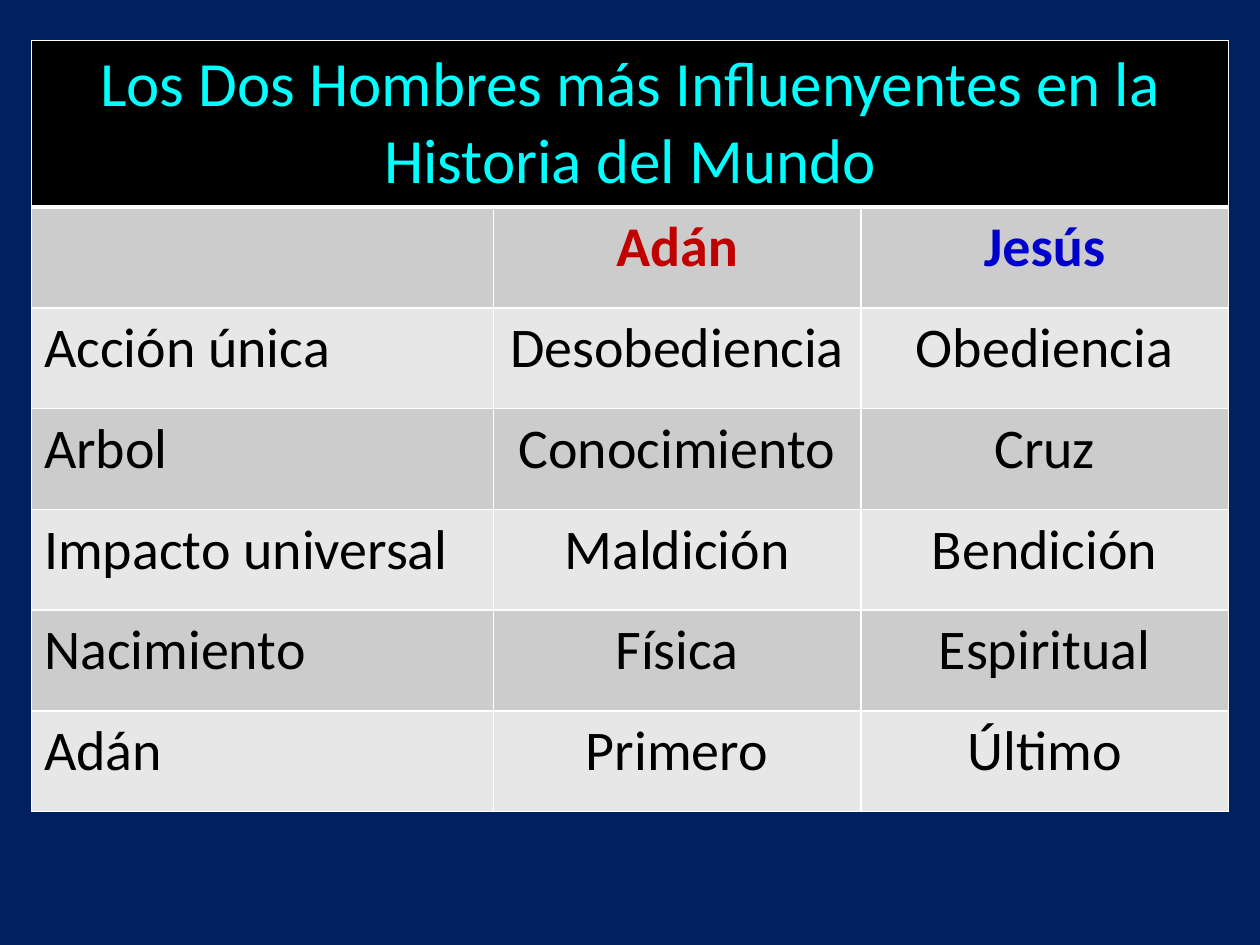
import pptx
import pptx.dml.color
import pptx.enum.text
import pptx.oxml.ns
import pptx.util
from lxml import etree

Inches = pptx.util.Inches
Pt = pptx.util.Pt
RGBColor = pptx.dml.color.RGBColor
ALIGN = pptx.enum.text.PP_ALIGN

NAVY = RGBColor(0x00, 0x20, 0x60)
BLACK = RGBColor(0x00, 0x00, 0x00)
WHITE = RGBColor(0xFF, 0xFF, 0xFF)
CYAN = RGBColor(0x00, 0xFF, 0xFF)
RED = RGBColor(0xC0, 0x00, 0x00)
BLUE = RGBColor(0x00, 0x00, 0xCC)
DARK_BAND = RGBColor(0xCC, 0xCC, 0xCC)
LIGHT_BAND = RGBColor(0xE7, 0xE7, 0xE7)

TITLE = "Los Dos Hombres más Influenyentes en la Historia del Mundo"
COMPARISON = [
    ("", "Adán", "Jesús"),
    ("Acción única", "Desobediencia", "Obediencia"),
    ("Arbol", "Conocimiento", "Cruz"),
    ("Impacto universal", "Maldición", "Bendición"),
    ("Nacimiento", "Física", "Espiritual"),
    ("Adán", "Primero", "Último"),
]
NAME_COLORS = [BLACK, RED, BLUE]
COLUMN_SHARES = [3.67, 2.92, 2.92]
TITLE_HEIGHT = 1.3

TITLE_FORMAT = {"name": "Calibri", "size": Pt(36), "bold": False}
BODY_FORMAT = {"name": "Calibri", "size": Pt(32), "bold": False}
NAME_FORMAT = {**BODY_FORMAT, "bold": True}


def set_borders(cell, widths):
    properties = cell._tc.get_or_add_tcPr()
    for side, width in widths.items():
        line = etree.SubElement(
            properties, pptx.oxml.ns.qn(f"a:ln{side}"), w=str(Pt(width))
        )
        fill = etree.SubElement(line, pptx.oxml.ns.qn("a:solidFill"))
        etree.SubElement(fill, pptx.oxml.ns.qn("a:srgbClr"), val=str(WHITE))


def fill_cell(cell, text, fill, color, alignment, font_format, borders):
    set_borders(cell, borders)
    cell.fill.solid()
    cell.fill.fore_color.rgb = fill
    cell.text = text
    paragraph = cell.text_frame.paragraphs[0]
    paragraph.alignment = alignment
    font = paragraph.runs[0].font if text else paragraph.font
    for attribute, value in font_format.items():
        setattr(font, attribute, value)
    font.color.rgb = color


def add_comparison_table(slide, left, top, width, height):
    row_count = len(COMPARISON) + 1
    column_count = len(COLUMN_SHARES)
    table = slide.shapes.add_table(
        row_count, column_count,
        Inches(left), Inches(top), Inches(width), Inches(height),
    ).table
    for column, share in zip(table.columns, COLUMN_SHARES):
        column.width = Inches(width * share / sum(COLUMN_SHARES))
    row_height = (height - TITLE_HEIGHT) / len(COMPARISON)
    for index, row in enumerate(table.rows):
        row.height = Inches(row_height if index else TITLE_HEIGHT)

    title_borders = {"L": 1, "R": 1, "T": 1, "B": 3}
    table.cell(0, 0).merge(table.cell(0, column_count - 1))
    fill_cell(table.cell(0, 0), TITLE, BLACK, CYAN, ALIGN.CENTER,
              TITLE_FORMAT, title_borders)
    for column_index in range(1, column_count):
        set_borders(table.cell(0, column_index), title_borders)

    for row_index, texts in enumerate(COMPARISON):
        is_names = row_index == 0
        band = LIGHT_BAND if row_index % 2 else DARK_BAND
        borders = {"L": 1, "R": 1, "T": 3 if is_names else 1, "B": 1}
        for column_index, text in enumerate(texts):
            fill_cell(
                table.cell(row_index + 1, column_index), text, band,
                NAME_COLORS[column_index] if is_names else BLACK,
                ALIGN.CENTER if column_index else ALIGN.LEFT,
                NAME_FORMAT if is_names else BODY_FORMAT,
                borders,
            )


def main():
    presentation = pptx.Presentation()
    presentation.slide_width = Inches(10)
    presentation.slide_height = Inches(7.5)
    slide = presentation.slides.add_slide(presentation.slide_layouts[6])
    slide.background.fill.solid()
    slide.background.fill.fore_color.rgb = NAVY
    add_comparison_table(slide, 0.25, 0.32, 9.5, 6.1)
    presentation.save("out.pptx")


if __name__ == "__main__":
    main()
